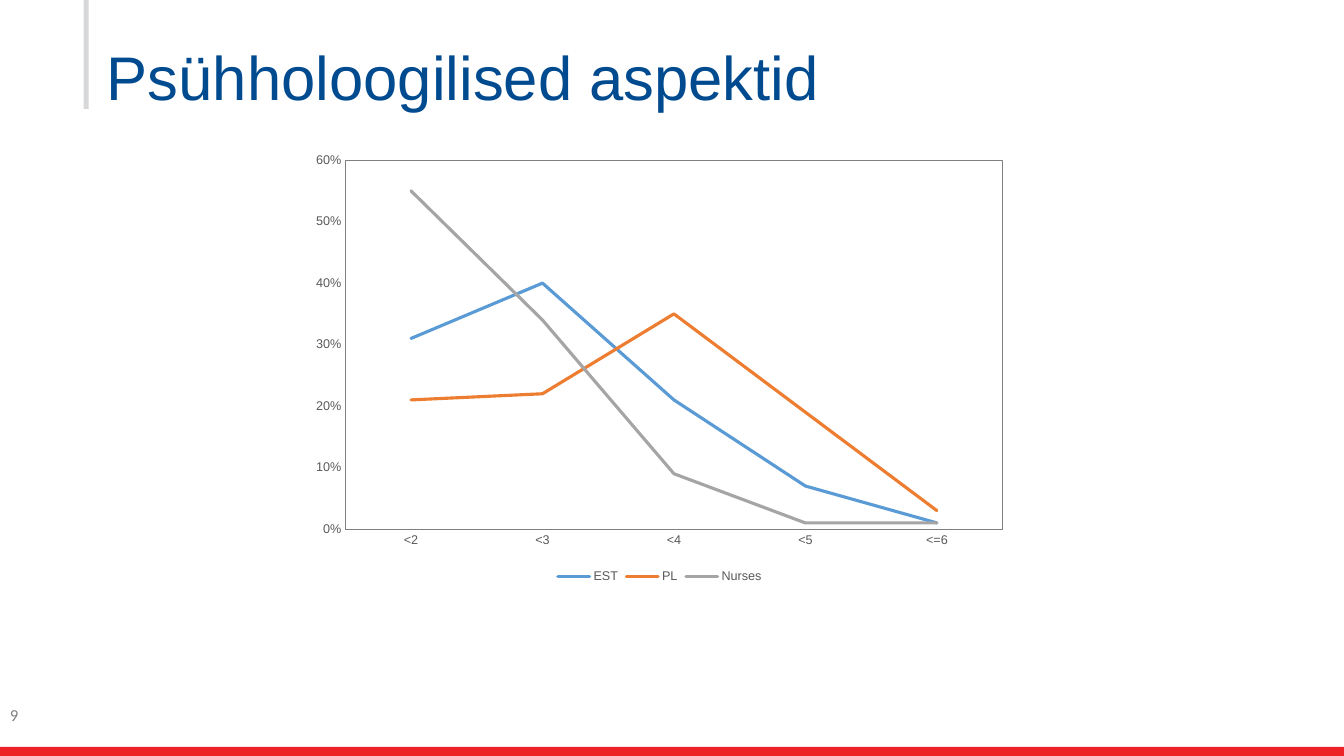
from pptx import Presentation
from pptx.chart.data import CategoryChartData
from pptx.dml.color import RGBColor
from pptx.enum.chart import XL_CHART_TYPE, XL_LEGEND_POSITION, XL_TICK_MARK
from pptx.enum.shapes import MSO_SHAPE
from pptx.enum.text import MSO_ANCHOR, MSO_AUTO_SIZE, PP_ALIGN
from pptx.oxml import parse_xml
from pptx.oxml.ns import nsdecls, qn
from pptx.util import Pt

LINE = XL_CHART_TYPE.LINE
BOTTOM = XL_LEGEND_POSITION.BOTTOM
NO_TICK = XL_TICK_MARK.NONE
RECT = MSO_SHAPE.RECTANGLE
TOP, MIDDLE = MSO_ANCHOR.TOP, MSO_ANCHOR.MIDDLE
NO_FIT = MSO_AUTO_SIZE.NONE
LEFT = PP_ALIGN.LEFT

RED = RGBColor(0xEC, 0x22, 0x27)
RULE_GREY = RGBColor(0xD6, 0xD8, 0xD9)
TITLE_BLUE = RGBColor(0x00, 0x4A, 0x8F)
GREY = RGBColor(0x80, 0x80, 0x80)
TEXT_GREY = RGBColor(0x59, 0x59, 0x59)
BLACK = RGBColor(0x00, 0x00, 0x00)

CATEGORIES = ["<2", "<3", "<4", "<5", "<=6"]
SERIES = [
    ("EST", [0.31, 0.40, 0.21, 0.07, 0.01], RGBColor(0x5B, 0x9B, 0xD5)),
    ("PL", [0.21, 0.22, 0.35, 0.19, 0.03], RGBColor(0xED, 0x7D, 0x31)),
    ("Nurses", [0.55, 0.34, 0.09, 0.01, 0.01], RGBColor(0xA5, 0xA5, 0xA5)),
]
WIDTH, HEIGHT = 960, 540


def set_font(font, name, size, color):
    font.name = name
    font.size = Pt(size)
    font.color.rgb = color
    font.bold = False


def add_bar(slide, x, y, w, h, color):
    sp = slide.shapes.add_shape(RECT, Pt(x), Pt(y), Pt(w), Pt(h))
    sp.shadow.inherit = False
    sp.fill.solid()
    sp.fill.fore_color.rgb = color
    sp.line.fill.background()


def write_text(sp, text, anchor, name, size, color):
    tf = sp.text_frame
    tf.word_wrap = True
    tf.auto_size = NO_FIT
    tf.vertical_anchor = anchor
    tf.margin_left = tf.margin_right = Pt(7.2)
    tf.margin_top = tf.margin_bottom = Pt(3.6)
    p = tf.paragraphs[0]
    p.text = text
    p.alignment = LEFT
    set_font(p.font, name, size, color)
    return p


def add_header(slide, x, y, w, h):
    add_bar(slide, x, y, 3.6, h, RULE_GREY)
    title = slide.shapes.title
    title.left, title.top = Pt(x + 9.3), Pt(y + 30.2)
    title.width, title.height = Pt(w - 9.3), Pt(72.7)
    p = write_text(title, "Psühholoogilised aspektid", TOP, "Arial", 44, TITLE_BLUE)
    p.line_spacing = 0.9


def add_footer(slide, x, y, w, h):
    sp = slide.shapes.add_textbox(Pt(x), Pt(y), Pt(216), Pt(28.8))
    write_text(sp, "9", MIDDLE, "Calibri", 12, GREY)
    add_bar(slide, x, y + h - 6.5, w, 6.5, RED)


def frame_plot(chart):
    plot_area = chart.plots[0]._element.getparent()
    for layout in plot_area.findall(qn("c:layout")):
        plot_area.remove(layout)
    box = "".join(
        f'<c:{tag} val="{val}"/>'
        for tag, val in [("layoutTarget", "inner"), ("xMode", "edge"), ("yMode", "edge"),
                         ("x", 0.06), ("y", 0.036), ("w", 0.92), ("h", 0.832)]
    )
    plot_area.insert(0, parse_xml(
        f'<c:layout {nsdecls("c")}><c:manualLayout>{box}</c:manualLayout></c:layout>'))
    plot_area.append(parse_xml(
        f'<c:spPr {nsdecls("c", "a")}><a:noFill/><a:ln w="9525"><a:solidFill>'
        f'<a:srgbClr val="{GREY}"/></a:solidFill></a:ln></c:spPr>'))


def add_line_chart(slide, x, y, w, h):
    data = CategoryChartData(number_format="0%")
    data.categories = CATEGORIES
    for name, values, _ in SERIES:
        data.add_series(name, values)
    chart = slide.shapes.add_chart(LINE, Pt(x), Pt(y), Pt(w), Pt(h), data).chart
    set_font(chart.font, "Arial", 10, BLACK)
    chart.has_title = False
    chart.has_legend = True
    chart.legend.position = BOTTOM
    chart.legend.include_in_layout = False
    set_font(chart.legend.font, "Arial", 9, TEXT_GREY)

    for axis in (chart.category_axis, chart.value_axis):
        axis.has_major_gridlines = False
        axis.major_tick_mark = axis.minor_tick_mark = NO_TICK
        set_font(axis.tick_labels.font, "Arial", 9, TEXT_GREY)
    chart.category_axis.format.line.color.rgb = GREY
    chart.category_axis.format.line.width = Pt(0.75)
    values = chart.value_axis
    values.format.line.fill.background()
    values.minimum_scale, values.maximum_scale, values.major_unit = 0, 0.6, 0.1
    values.tick_labels.number_format = "0%"
    values.tick_labels.number_format_is_linked = False

    plot = chart.plots[0]
    plot.vary_by_categories = False
    for series, (_, _, color) in zip(plot.series, SERIES):
        series.smooth = False
        line = series.format.line
        line.color.rgb = color
        line.width = Pt(2.25)
        line._ln.set("cap", "rnd")
    frame_plot(chart)


def main():
    prs = Presentation()
    prs.slide_width, prs.slide_height = Pt(WIDTH), Pt(HEIGHT)
    slide = prs.slides.add_slide(prs.slide_layouts[5])
    add_header(slide, 59.8, 0, 837.4, 77.8)
    add_line_chart(slide, 216, 103, 510.5, 316.8)
    add_footer(slide, 0, 496, WIDTH, HEIGHT - 496)
    prs.save("out.pptx")


if __name__ == "__main__":
    main()
